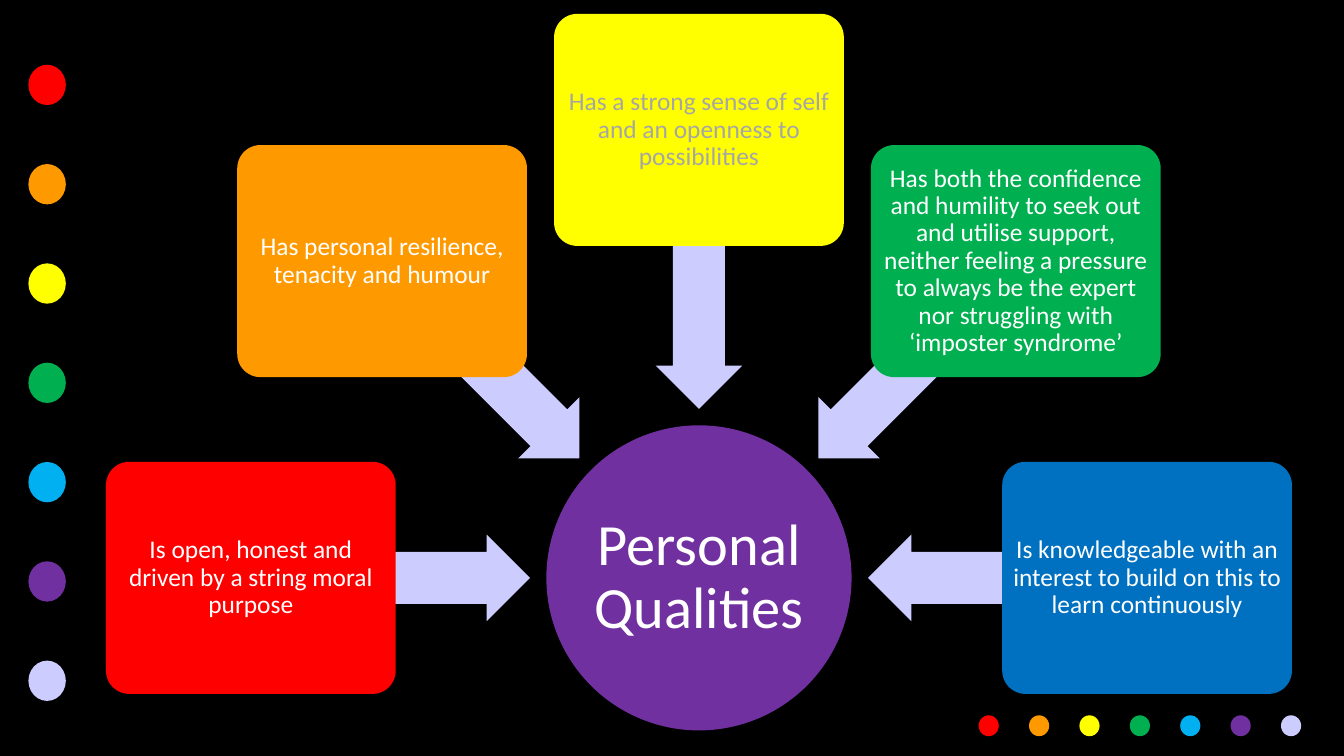
from math import cos, radians, sin

from pptx import Presentation
from pptx.dml.color import RGBColor
from pptx.enum.shapes import MSO_SHAPE as SHAPE
from pptx.enum.text import MSO_ANCHOR, MSO_AUTO_SIZE, PP_ALIGN
from pptx.util import Cm, Pt

# Content
TITLE = "Personal Qualities"
QUALITIES = [  # text, box colour, text colour: clockwise from the left
    ("Is open, honest and driven by a string moral purpose", "FF0000", "FFFFFF"),
    ("Has personal resilience, tenacity and humour", "FF9900", "FFFFFF"),
    ("Has a strong sense of self and an openness to possibilities",
     "FFFF00", "A6A6A6"),
    ("Has both the confidence and humility to seek out and utilise support, "
     "neither feeling a pressure to always be the expert nor struggling with "
     "‘imposter syndrome’", "00B050", "FFFFFF"),
    ("Is knowledgeable with an interest to build on this to learn continuously",
     "0070C0", "FFFFFF"),
]
DOT_COLOURS = ["FF0000", "FF9900", "FFFF00", "00B050", "00B0F0", "7030A0", "CCCCFF"]
BLACK, WHITE, PURPLE, LILAC = "000000", "FFFFFF", "7030A0", "CCCCFF"
FONT = "Calibri"

# Layout in centimetres
HUB_X, HUB_Y, HUB_SIZE = 19.42, 16.06, 8.48
TITLE_SIZE = 6.0
BOX_W, BOX_H, BOX_RADIUS = 8.05, 6.45, 12.45
ARROW_W, ARROW_H, ARROW_RADIUS = 7.75, 2.41, 8.57
STEP = 45  # degrees between neighbouring boxes


def rgb(hex_colour):
    return RGBColor.from_string(hex_colour)


def add_shape(kind, cx, cy, w, h, colour):
    """Add a plain filled shape centred on (cx, cy)."""
    sp = slide.shapes.add_shape(kind, Cm(cx - w / 2), Cm(cy - h / 2), Cm(w), Cm(h))
    sp.shadow.inherit = False
    sp.fill.solid()
    sp.fill.fore_color.rgb = rgb(colour)
    sp.line.fill.background()
    return sp


def set_text(sp, text, size, colour, inset):
    tf = sp.text_frame
    tf.text = text
    tf.word_wrap = True
    tf.auto_size = MSO_AUTO_SIZE.NONE
    tf.vertical_anchor = MSO_ANCHOR.MIDDLE
    tf.margin_left = tf.margin_right = tf.margin_top = tf.margin_bottom = Cm(inset)
    p = tf.paragraphs[0]
    p.alignment = PP_ALIGN.CENTER
    p.line_spacing = 0.9
    font = p.runs[0].font
    font.name, font.size, font.color.rgb = FONT, Pt(size), rgb(colour)


def around_hub(radius, angle):
    a = radians(angle)
    return HUB_X + radius * cos(a), HUB_Y + radius * sin(a)


prs = Presentation()
prs.slide_width, prs.slide_height = Cm(37.34), Cm(21.01)
slide = prs.slides.add_slide(prs.slide_layouts[5])
slide.background.fill.solid()
slide.background.fill.fore_color.rgb = rgb(BLACK)

# Rainbow dots down the left side and along the bottom
for i, colour in enumerate(DOT_COLOURS):
    add_shape(SHAPE.OVAL, 1.31, 2.36 + 2.76 * i, 1.04, 1.12, colour)
    add_shape(SHAPE.OVAL, 27.47 + 1.4 * i, 20.17, 0.56, 0.58, colour)

# Hub, with the title in front of it
add_shape(SHAPE.OVAL, HUB_X, HUB_Y, HUB_SIZE, HUB_SIZE, PURPLE)
title = slide.shapes.title
title.left, title.top = Cm(HUB_X - TITLE_SIZE / 2), Cm(HUB_Y - TITLE_SIZE / 2)
title.width = title.height = Cm(TITLE_SIZE)
set_text(title, TITLE, 46, WHITE, 0.08)
slide.shapes._spTree.append(title._element)

# Quality boxes, each with an arrow pointing at the hub
for i, (text, fill, text_colour) in enumerate(QUALITIES):
    angle = 180 + STEP * i
    arrow = add_shape(SHAPE.LEFT_ARROW, *around_hub(ARROW_RADIUS, angle),
                      ARROW_W, ARROW_H, LILAC)
    arrow.adjustments[0], arrow.adjustments[1] = 0.6, 0.5
    arrow.rotation = angle % 360
    box = add_shape(SHAPE.ROUNDED_RECTANGLE, *around_hub(BOX_RADIUS, angle),
                    BOX_W, BOX_H, fill)
    box.adjustments[0] = 0.1
    set_text(box, text, 20, text_colour, 0.1)

prs.save("out.pptx")
